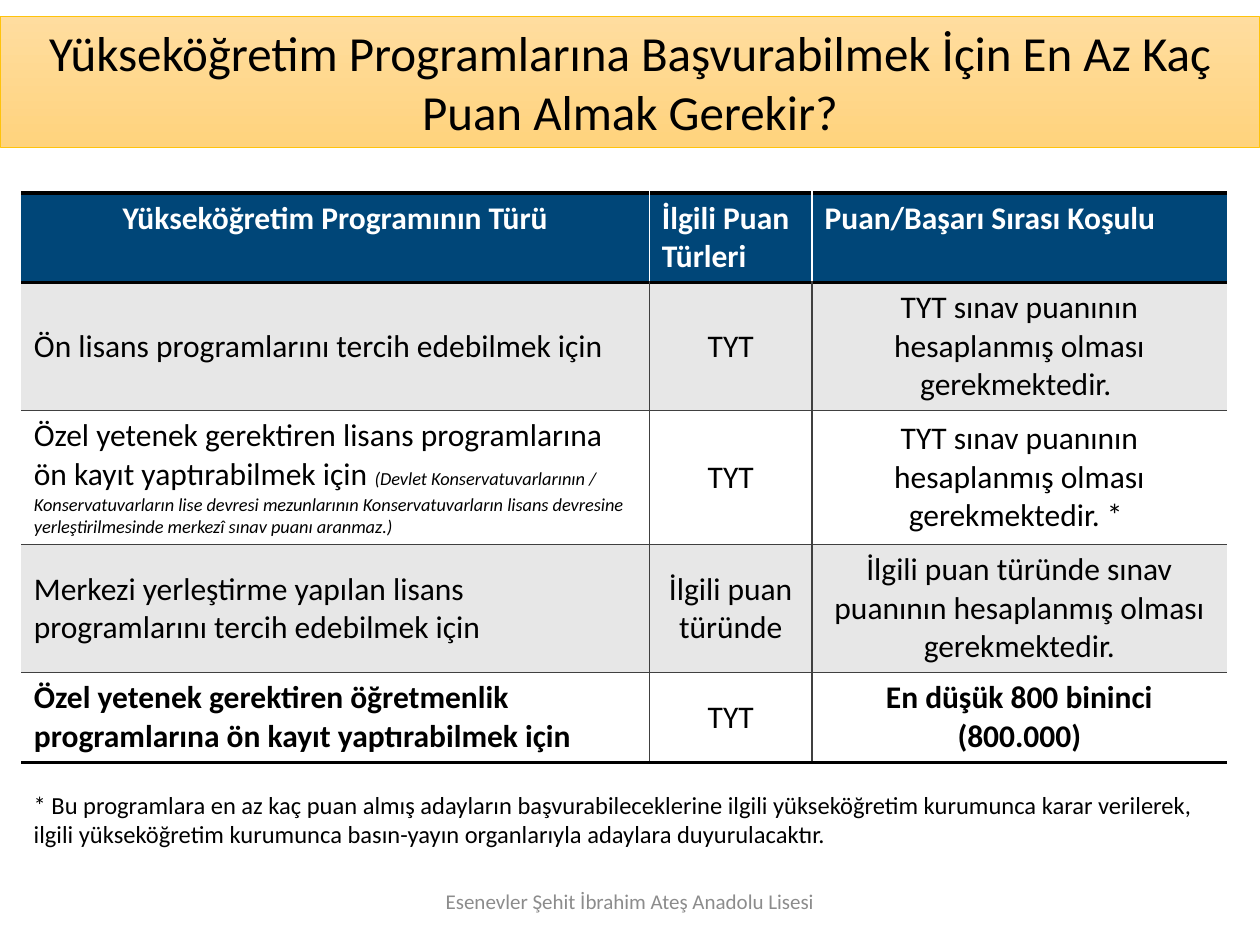
from lxml import etree
from pptx import Presentation
from pptx.dml.color import RGBColor
from pptx.enum.shapes import MSO_SHAPE
from pptx.enum.text import MSO_ANCHOR, PP_ALIGN
from pptx.oxml.ns import qn
from pptx.util import Cm, Pt

LEFT, MID = PP_ALIGN.LEFT, PP_ALIGN.CENTER
TOP, CENTER = MSO_ANCHOR.TOP, MSO_ANCHOR.MIDDLE
FONT = "Calibri"
HEX = {
    "black": "000000", "white": "FFFFFF", "navy": "004678", "band": "E7E7E7",
    "rule": "404040", "muted": "8C8C8C", "gold": "FFC30B",
    "light": "FFDD9F", "deep": "FFD37D",
}

TITLE = "Yükseköğretim Programlarına Başvurabilmek İçin En Az Kaç Puan Almak Gerekir?"
NOTE = ("* Bu programlara en az kaç puan almış adayların başvurabileceklerine ilgili "
        "yükseköğretim kurumunca karar verilerek, ilgili yükseköğretim kurumunca "
        "basın-yayın organlarıyla adaylara duyurulacaktır.")
SCHOOL = "Esenevler Şehit İbrahim Ateş Anadolu Lisesi"
SMALL = ("(Devlet Konservatuvarlarının / Konservatuvarların lise devresi mezunlarının "
         "Konservatuvarların lisans devresine yerleştirilmesinde merkezî sınav puanı aranmaz.)")
ROWS = [
    ["Yükseköğretim Programının Türü", "İlgili Puan Türleri ", "Puan/Başarı Sırası Koşulu"],
    ["Ön lisans programlarını tercih edebilmek için", "TYT",
     "TYT sınav puanının hesaplanmış olması gerekmektedir. "],
    ["Özel yetenek gerektiren lisans programlarına ön kayıt yaptırabilmek için ", "TYT",
     "TYT sınav puanının hesaplanmış olması gerekmektedir. * "],
    ["Merkezi yerleştirme yapılan lisans programlarını tercih edebilmek için",
     "İlgili puan türünde",
     "İlgili puan türünde sınav puanının hesaplanmış olması gerekmektedir."],
    ["Özel yetenek gerektiren öğretmenlik programlarına ön kayıt yaptırabilmek için", "TYT",
     "En düşük 800 bininci (800.000)"],
]
WIDTHS = [12.66, 3.28, 8.36]
HEIGHTS = [1.78, 2.54, 2.67, 2.54, 1.78]
LAST = len(ROWS) - 1
END = len(WIDTHS) - 1
BOLD = {(0, 0), (0, 1), (0, 2), (LAST, 0), (LAST, 2)}


def rgb(name):
    return RGBColor.from_string(HEX[name])


def add_run(para, text, color="black", **form):
    run = para.add_run()
    run.text = text
    for key, val in {"name": FONT, **form}.items():
        setattr(run.font, key, val)
    run.font.color.rgb = rgb(color)


def write(frame, text, align, anchor, color, size):
    frame.word_wrap = True
    frame.vertical_anchor = anchor
    para = frame.paragraphs[0]
    para.alignment = align
    add_run(para, text, color, size=Pt(size))


def add_text(slide, box, *args):
    shape = slide.shapes.add_textbox(*map(Cm, box))
    write(shape.text_frame, *args)


def edge(cell, spot, side, line):
    """Put one border on a cell; line is (colour, points) or None."""
    props = cell._tc.get_or_add_tcPr()
    node = etree.Element(qn("a:ln" + side))
    if line:
        color, width = line
        node.set("w", str(Pt(width)))
        fill = etree.SubElement(node, qn("a:solidFill"))
        etree.SubElement(fill, qn("a:srgbClr"), val=HEX[color])
    else:
        etree.SubElement(node, qn("a:noFill"))
    props.insert(spot, node)


def add_title(slide):
    bar = slide.shapes.add_shape(MSO_SHAPE.RECTANGLE, *map(Cm, (0, 0.33, 25.4, 2.64)))
    bar.shadow.inherit = False
    bar.fill.gradient()
    bar.fill.gradient_angle = 270
    for stop, name in zip(bar.fill.gradient_stops, ("light", "deep")):
        stop.color.rgb = rgb(name)
    bar.line.color.rgb = rgb("gold")
    bar.line.width = Pt(0.5)
    write(bar.text_frame, TITLE, MID, CENTER, "black", 28)


def fill_cell(cell, row, col):
    head = row == 0
    cell.fill.solid()
    cell.fill.fore_color.rgb = rgb("navy" if head else "band" if row % 2 else "white")
    cell.vertical_anchor = TOP if head else CENTER
    para = cell.text_frame.paragraphs[0]
    para.alignment = LEFT if (col == 0) != head and col < END or head and col == END else MID
    add_run(para, ROWS[row][col], "white" if head else "black",
            size=Pt(18), bold=(row, col) in BOLD)
    if (row, col) == (2, 0):
        add_run(para, SMALL, size=Pt(10.5), italic=True, bold=False)

    thick, thin = ("black", 2), ("rule", 1)
    side = ("white", 1) if head else thin
    lines = {
        "L": side if col else None,
        "R": side if col < END else None,
        "T": thick if row < 2 else thin,
        "B": thick if row in (0, LAST) else thin,
    }
    for spot, (name, line) in enumerate(lines.items()):
        edge(cell, spot, name, line)


def add_grid(slide):
    box = map(Cm, (0.43, 3.89, sum(WIDTHS), sum(HEIGHTS)))
    table = slide.shapes.add_table(len(ROWS), len(WIDTHS), *box).table
    for col, width in enumerate(WIDTHS):
        table.columns[col].width = Cm(width)
    for row, height in enumerate(HEIGHTS):
        table.rows[row].height = Cm(height)
        for col in range(len(WIDTHS)):
            fill_cell(table.cell(row, col), row, col)


def main():
    deck = Presentation()
    deck.slide_width, deck.slide_height = Cm(25.4), Cm(19.05)
    slide = deck.slides.add_slide(deck.slide_layouts[6])
    add_title(slide)
    add_grid(slide)
    add_text(slide, (0.43, 15.8, 24.3, 2.24), NOTE, LEFT, TOP, "black", 14)
    add_text(slide, (8.4, 17.65, 8.6, 1.02), SCHOOL, MID, CENTER, "muted", 12)
    deck.save("out.pptx")


if __name__ == "__main__":
    main()
